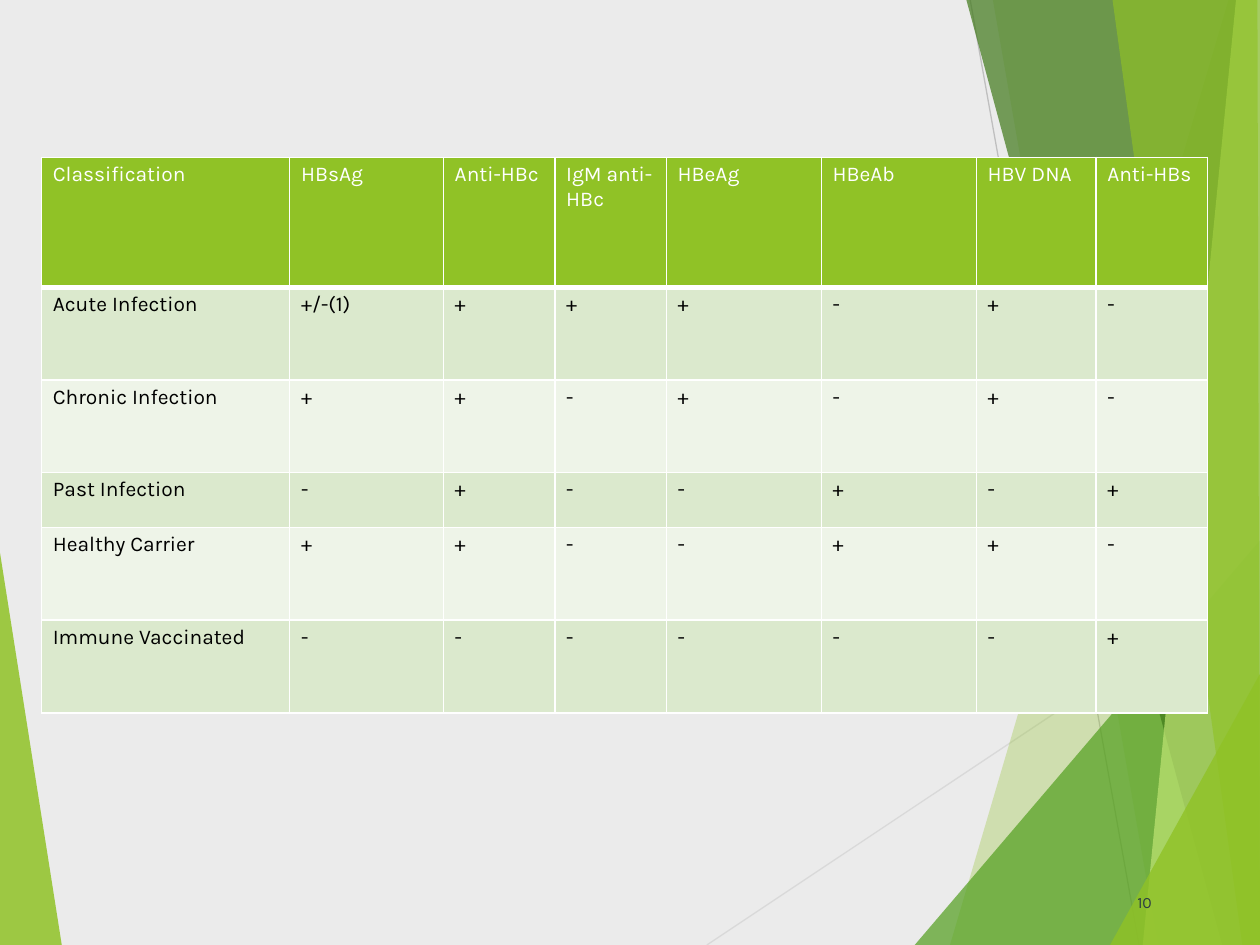
import dataclasses

import lxml.etree
import pptx
import pptx.dml.color
import pptx.enum.shapes
import pptx.enum.text
import pptx.oxml
import pptx.oxml.ns
import pptx.util

SLIDE_WIDTH = pptx.util.Inches(10)
SLIDE_HEIGHT = pptx.util.Inches(7.5)
FONT = "Karla"
GREEN = "90C226"
WHITE = "FFFFFF"
BANDS = ("DBE9CD", "EEF4E8")

Point = tuple[float, float]


# All positions are percentages of the slide's width and height.
@dataclasses.dataclass(frozen=True)
class Facet:
    points: tuple[Point, ...]
    color: str
    opacity: int


@dataclasses.dataclass(frozen=True)
class Ray:
    start: Point
    end: Point
    color: str


RAYS = (
    Ray((56.1, 100), (100, 61), "D9D9D9"),
    Ray((77, 0), (90.4, 100), "BFBFBF"),
)
LEFT_FACET = Facet(((0, 58.5), (4.9, 100), (0, 100)), GREEN, 85)
RIGHT_FACETS = (
    Facet(((97.5, 0), (75.4, 100), (100, 100), (100, 0)), GREEN, 30),
    Facet(((78.8, 0), (91.9, 100), (100, 100), (100, 0)), GREEN, 20),
    Facet(((72.6, 100), (100, 57.2), (100, 100)), "54A021", 72),
    Facet(((76.7, 0), (97, 100), (100, 100), (100, 0)), "3F7819", 70),
    Facet(((98.1, 0), (90.7, 100), (100, 100), (100, 0)), "C0E474", 70),
    Facet(((88.3, 0), (98.6, 100), (100, 100), (99.8, 0)), GREEN, 65),
    Facet(((88.1, 100), (100, 71.3), (100, 100)), GREEN, 80),
)

MARKERS = ("Classification", "HBsAg", "Anti-HBc", "IgM anti-HBc",
           "HBeAg", "HBeAb", "HBV DNA", "Anti-HBs")
PROFILES = (
    ("Acute Infection", "+/-(1)", "+", "+", "+", "-", "+", "-"),
    ("Chronic Infection", "+", "+", "-", "+", "-", "+", "-"),
    ("Past Infection", "-", "+", "-", "-", "+", "-", "+"),
    ("Healthy Carrier", "+", "+", "-", "-", "+", "+", "-"),
    ("Immune Vaccinated", "-", "-", "-", "-", "-", "-", "+"),
)
COLUMN_WIDTHS = (19.7, 12.2, 8.85, 8.85, 12.3, 12.3, 9.5, 8.85)
ROW_HEIGHTS = (13.75, 9.8, 9.8, 5.85, 9.8, 9.8)


def across(percent: float) -> int:
    return round(SLIDE_WIDTH * percent / 100)


def down(percent: float) -> int:
    return round(SLIDE_HEIGHT * percent / 100)


def rgb(color: str) -> pptx.dml.color.RGBColor:
    return pptx.dml.color.RGBColor.from_string(color)


def paint(fill, color: str) -> None:
    fill.solid()
    fill.fore_color.rgb = rgb(color)


def add_run(paragraph, words: str, size: float, color: str) -> None:
    run = paragraph.add_run()
    run.text = words
    run.font.name = FONT
    run.font.size = pptx.util.Pt(size)
    run.font.bold = False
    run.font.color.rgb = rgb(color)


def draw_facet(slide, facet: Facet) -> None:
    corners = [(across(x), down(y)) for x, y in facet.points]
    builder = slide.shapes.build_freeform(*corners[0])
    builder.add_line_segments(corners[1:], close=True)
    shape = builder.convert_to_shape()
    shape.shadow.inherit = False
    shape.line.fill.background()
    paint(shape.fill, facet.color)
    tint = shape.fill._xPr.find(".//" + pptx.oxml.ns.qn("a:srgbClr"))
    lxml.etree.SubElement(tint, pptx.oxml.ns.qn("a:alpha"), val=str(facet.opacity * 1000))


def draw_ray(slide, ray: Ray) -> None:
    line = slide.shapes.add_connector(
        pptx.enum.shapes.MSO_CONNECTOR.STRAIGHT,
        across(ray.start[0]), down(ray.start[1]),
        across(ray.end[0]), down(ray.end[1]))
    line.line.color.rgb = rgb(ray.color)
    line.line.width = pptx.util.Pt(0.75)
    lxml.etree.SubElement(line._element.spPr, pptx.oxml.ns.qn("a:effectLst"))


def set_borders(cell, bottom_width: float) -> None:
    properties = cell._tc.get_or_add_tcPr()
    for side, width in (("L", 1), ("R", 1), ("T", 1), ("B", bottom_width)):
        border = lxml.etree.SubElement(
            properties, pptx.oxml.ns.qn(f"a:ln{side}"), w=str(pptx.util.Pt(width)))
        solid = lxml.etree.SubElement(border, pptx.oxml.ns.qn("a:solidFill"))
        lxml.etree.SubElement(solid, pptx.oxml.ns.qn("a:srgbClr"), val=WHITE)


def fill_cell(cell, words: str, background: str, color: str, bottom_width: float) -> None:
    set_borders(cell, bottom_width)
    paint(cell.fill, background)
    cell.margin_left = cell.margin_right = pptx.util.Inches(0.09)
    cell.margin_top = cell.margin_bottom = pptx.util.Inches(0.04)
    add_run(cell.text_frame.paragraphs[0], words, 12, color)


def draw_marker_table(slide) -> None:
    table = slide.shapes.add_table(
        len(ROW_HEIGHTS), len(COLUMN_WIDTHS), across(3.3), down(16.65),
        across(sum(COLUMN_WIDTHS)), down(sum(ROW_HEIGHTS))).table
    for column, width in zip(table.columns, COLUMN_WIDTHS):
        column.width = across(width)
    for row, height in zip(table.rows, ROW_HEIGHTS):
        row.height = down(height)
    for column, marker in enumerate(MARKERS):
        fill_cell(table.cell(0, column), marker, GREEN, WHITE, 3)
    for row, profile in enumerate(PROFILES, start=1):
        for column, result in enumerate(profile):
            fill_cell(table.cell(row, column), result, BANDS[(row - 1) % 2], "000000", 1)


def draw_page_number(slide) -> None:
    frame = slide.shapes.add_textbox(
        across(69.3), down(92.9), across(23.1), down(5.1)).text_frame
    frame.word_wrap = True
    frame.vertical_anchor = pptx.enum.text.MSO_ANCHOR.MIDDLE
    paragraph = frame.paragraphs[0]
    paragraph.alignment = pptx.enum.text.PP_ALIGN.RIGHT
    paragraph.space_after = pptx.util.Pt(6)
    add_run(paragraph, "10", 9, "2C3C43")


def main() -> None:
    deck = pptx.Presentation()
    deck.slide_width, deck.slide_height = SLIDE_WIDTH, SLIDE_HEIGHT
    slide = deck.slides.add_slide(deck.slide_layouts[6])
    paint(slide.background.fill, "EBEBEB")

    # Faceted backdrop, from back to front
    draw_facet(slide, LEFT_FACET)
    for ray in RAYS:
        draw_ray(slide, ray)
    for facet in RIGHT_FACETS:
        draw_facet(slide, facet)

    # Content
    draw_page_number(slide)
    draw_marker_table(slide)
    deck.save("out.pptx")


if __name__ == "__main__":
    main()
